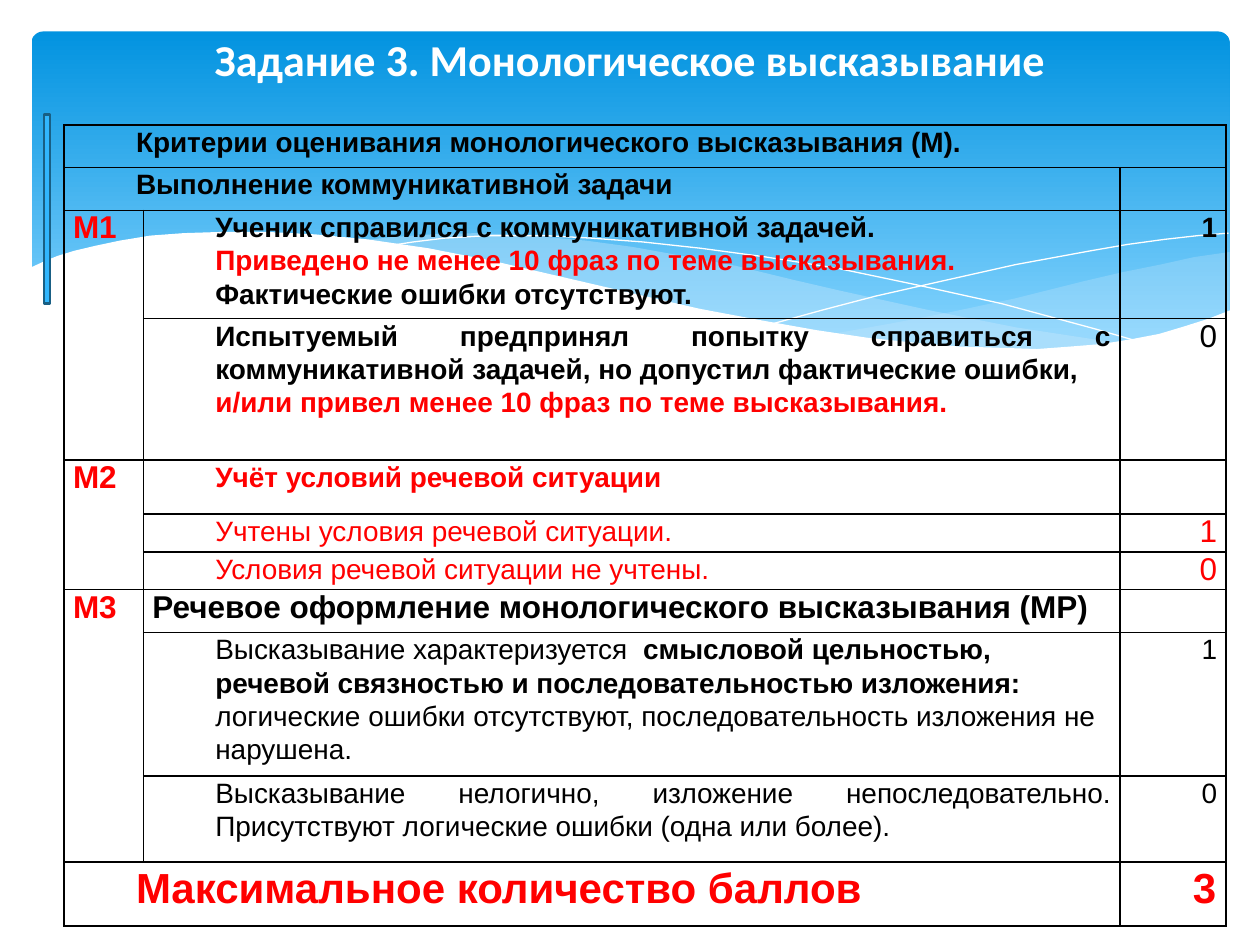
from dataclasses import dataclass

from lxml import etree
from pptx import Presentation
from pptx.dml.color import RGBColor
from pptx.enum.shapes import MSO_SHAPE
from pptx.enum.text import MSO_ANCHOR, PP_ALIGN
from pptx.oxml.ns import qn
from pptx.util import Inches, Pt

ROUND, RECT = MSO_SHAPE.ROUNDED_RECTANGLE, MSO_SHAPE.RECTANGLE
MIDDLE = MSO_ANCHOR.MIDDLE
LEFT, RIGHT, CENTER, JUST = PP_ALIGN.LEFT, PP_ALIGN.RIGHT, PP_ALIGN.CENTER, PP_ALIGN.JUSTIFY


@dataclass(frozen=True)
class Theme:
    black: str = "000000"
    white: str = "FFFFFF"
    red: str = "FF0000"
    sky: str = "0293E0"
    pale: str = "83D3FE"
    mist: str = "C6E7FC"
    blue: str = "31B6FD"
    navy: str = "195F84"
    head: str = "Calibri"
    body: str = "Arial"
    title: float = 25.2
    text: int = 16
    mark: int = 18
    total: int = 24


T = Theme()
COLS = [0.63, 7.75, 0.84]
ROWS = [0.34, 0.34, 0.86, 1.12, 0.43, 0.3, 0.3, 0.34, 1.14, 0.68, 0.51]
SPANS = [(0, 0, 0, 2), (1, 0, 1, 1), (2, 0, 3, 0), (4, 0, 6, 0), (7, 0, 9, 0), (10, 0, 10, 1)]

BOLD = {"size": T.text, "bold": True, "color": T.black}
PLAIN = {**BOLD, "bold": False}
ALERT = {**BOLD, "color": T.red}
SOFT = {**PLAIN, "color": T.red}
LABEL = {**ALERT, "size": T.mark}
TOTAL = {**ALERT, "size": T.total}

INSET = {"indent": 0.5, "spacing": 1.07}
BODY = {"align": JUST, **INSET}
LOOSE = {"align": LEFT, **INSET}
SCORE = {"align": RIGHT, **INSET}
SUM = {"align": CENTER, **INSET}
FLUSH = {"align": LEFT}
EDGE = {"align": RIGHT}

CELLS = [
    (0, 0, BODY, [[("Критерии оценивания монологического высказывания (М).", BOLD)]]),
    (1, 0, BODY, [[("Выполнение коммуникативной задачи", BOLD)]]),
    (2, 0, FLUSH, [[("М1", LABEL)]]),
    (2, 1, BODY, [
        [("Ученик справился с коммуникативной задачей.", BOLD)],
        [("Приведено не менее 10 фраз по теме высказывания.", ALERT)],
        [("Фактические ошибки отсутствуют.", BOLD)]]),
    (2, 2, SCORE, [[("1", BOLD)]]),
    (3, 1, BODY, [
        [("Испытуемый предпринял попытку справиться с коммуникативной задачей, "
          "но допустил фактические ошибки,", BOLD)],
        [("и/или привел менее 10 фраз по теме высказывания.", ALERT)]]),
    (3, 2, EDGE, [[("0", {**PLAIN, "size": T.mark})]]),
    (4, 0, FLUSH, [[("М2", LABEL)]]),
    (4, 1, BODY, [[("Учёт условий речевой ситуации", ALERT)]]),
    (5, 1, BODY, [[("Учтены условия речевой ситуации.", SOFT)]]),
    (5, 2, EDGE, [[("1", {**SOFT, "size": T.mark})]]),
    (6, 1, BODY, [[("Условия речевой ситуации не учтены.", SOFT)]]),
    (6, 2, EDGE, [[("0", {**SOFT, "size": T.mark})]]),
    (7, 0, FLUSH, [[("М3", LABEL)]]),
    (7, 1, FLUSH, [[("Речевое оформление монологического высказывания (МР)",
                     {**BOLD, "size": T.mark})]]),
    (8, 1, LOOSE, [[
        ("Высказывание характеризуется  ", PLAIN),
        ("смысловой цельностью, речевой связностью и последовательностью изложения:", BOLD),
        (" логические ошибки отсутствуют, последовательность изложения не нарушена.", PLAIN)]]),
    (8, 2, SCORE, [[("1", PLAIN)]]),
    (9, 1, BODY, [[("Высказывание нелогично, изложение непоследовательно. "
                    "Присутствуют логические ошибки (одна или более).", PLAIN)]]),
    (9, 2, SCORE, [[("0", PLAIN)]]),
    (10, 0, BODY, [[("Максимальное количество баллов", TOTAL)]]),
    (10, 2, SUM, [[("3", TOTAL)]]),
]

LENS = [(9.76, 2), (9.48, 2.04), (9.21, 2.1), (8.91, 2.16), (8.61, 2.23), (8.05, 2.37),
        (7.53, 2.48), (7.06, 2.57), (6.61, 2.65), (7.05, 2.71), (7.45, 2.75), (7.81, 2.77),
        (8.14, 2.78), (8.44, 2.77), (8.72, 2.74), (8.97, 2.7), (9.21, 2.65), (9.49, 2.57),
        (9.76, 2.47)]
BAND = [(8.93, 2.73), (8.66, 2.69), (8.07, 2.6), (7.41, 2.47), (6.68, 2.31), (6.29, 2.22),
        (5.84, 2.11), (5.41, 2.03), (5.02, 1.96), (4.65, 1.91), (4.2, 1.87), (3.8, 1.85),
        (3.44, 1.86), (3.13, 1.88), (2.86, 1.91), (3.23, 1.96), (3.62, 2.03), (4.04, 2.11),
        (4.49, 2.22), (4.91, 2.32), (5.3, 2.4), (5.66, 2.48), (6.01, 2.55), (6.34, 2.61),
        (6.65, 2.66), (6.95, 2.7), (7.36, 2.75), (7.73, 2.77), (8.07, 2.78), (8.38, 2.78),
        (8.67, 2.76)]
FALL = [(3.09, 1.95), (3.28, 1.92), (3.53, 1.89), (3.87, 1.87), (4.33, 1.87), (4.69, 1.89),
        (5.1, 1.92), (5.56, 1.97), (6.08, 2.04), (6.65, 2.13), (7.27, 2.26), (7.95, 2.41),
        (8.69, 2.61), (9.07, 2.72)]
RISE = [(6.13, 2.57), (6.53, 2.46), (6.95, 2.35), (7.48, 2.23), (8.06, 2.1), (8.66, 1.99),
        (8.95, 1.94), (9.24, 1.9), (9.51, 1.87), (9.75, 1.85)]
FRONT = [(9.77, 2.46), (9.59, 2.53), (9.4, 2.59), (9.2, 2.65), (8.99, 2.69), (8.75, 2.73),
         (8.5, 2.75), (8.23, 2.77), (7.93, 2.76), (7.61, 2.75), (7.26, 2.72), (6.88, 2.68),
         (6.48, 2.62), (6.03, 2.54), (5.55, 2.45), (5.03, 2.33), (4.47, 2.2), (3.91, 2.07),
         (3.4, 1.97), (2.92, 1.9), (2.5, 1.86), (2.11, 1.84), (1.77, 1.84), (1.46, 1.85),
         (1.19, 1.87), (0.95, 1.91), (0.76, 1.95), (0.59, 1.99), (0.46, 2.03), (0.36, 2.07),
         (0.23, 2.13), (0.23, 3.29), (9.77, 3.29)]


def rgb(hue):
    return RGBColor.from_string(hue)


def assign(item, **vals):
    for name, val in vals.items():
        setattr(item, name, val)


def ink(run, size, bold, color, name=T.body):
    assign(run.font, size=Pt(size), bold=bold, name=name)
    run.font.color.rgb = rgb(color)


def write(frame, look, lines):
    for num, runs in enumerate(lines):
        para = frame.add_paragraph() if num else frame.paragraphs[0]
        assign(para, alignment=look["align"], line_spacing=look.get("spacing", 1.0))
        props = para._p.get_or_add_pPr()
        props.set("marL", str(Inches(look.get("indent", 0))))
        props.set("indent", "0")
        for text, form in runs:
            run = para.add_run()
            run.text = text
            ink(run, **form)


def block(slide, kind, *box):
    shape = slide.shapes.add_shape(kind, *map(Inches, box))
    shape.shadow.inherit = False
    return shape


def curve(slide, pts, fill=None, alpha=100):
    first, *rest = [(Inches(x), Inches(y)) for x, y in pts]
    pen = slide.shapes.build_freeform(*first, scale=1.0)
    pen.add_line_segments(rest, close=fill is not None)
    shape = pen.convert_to_shape()
    shape.shadow.inherit = False
    if fill is None:
        shape.fill.background()
        shape.line.color.rgb = rgb(T.white)
        shape.line.width = Pt(0)
        return
    shape.line.fill.background()
    shape.fill.solid()
    shape.fill.fore_color.rgb = rgb(fill)
    if alpha < 100:
        tone = shape._element.spPr.find(qn("a:solidFill"))[0]
        etree.SubElement(tone, qn("a:alpha"), val=str(alpha * 1000))


def sky(slide):
    panel = block(slide, ROUND, 0.25, 0.25, 9.51, 2.7)
    panel.adjustments[0] = 0.034
    panel.line.fill.background()
    panel.fill.gradient()
    panel.fill.gradient_angle = 270
    for stop, hue, spot in zip(panel.fill.gradient_stops, (T.sky, T.pale), (0, 0.9)):
        stop.color.rgb = rgb(hue)
        stop.position = spot
    curve(slide, LENS, T.mist, 29)
    curve(slide, BAND, T.mist, 40)
    curve(slide, FALL)
    curve(slide, RISE)
    curve(slide, FRONT, T.white)


def title(slide, text):
    frame = slide.shapes.add_textbox(*map(Inches, (0.5, 0.2, 9, 0.54))).text_frame
    assign(frame, word_wrap=True, vertical_anchor=MIDDLE, margin_top=0, margin_bottom=0)
    form = {"size": T.title, "bold": True, "color": T.white, "name": T.head}
    write(frame, {"align": CENTER}, [[(text, form)]])


def border(cell):
    props = cell._tc.get_or_add_tcPr()
    for side in ("lnL", "lnR", "lnT", "lnB"):
        line = etree.SubElement(props, qn("a:" + side), w=str(Pt(1)))
        fill = etree.SubElement(line, qn("a:solidFill"))
        etree.SubElement(fill, qn("a:srgbClr"), val=T.black)


def grid(slide):
    box = map(Inches, (0.51, 0.99, sum(COLS), sum(ROWS)))
    table = slide.shapes.add_table(len(ROWS), len(COLS), *box).table
    assign(table, first_row=False, horz_banding=False)
    for col, width in zip(table.columns, COLS):
        col.width = Inches(width)
    for row, height in zip(table.rows, ROWS):
        row.height = Inches(height)
    for cell in table.iter_cells():
        assign(cell, margin_left=Inches(0.07), margin_right=Inches(0.07),
               margin_top=0, margin_bottom=0)
        border(cell)
        cell.fill.background()
    for top, left, low, right in SPANS:
        table.cell(top, left).merge(table.cell(low, right))
    for row, col, look, lines in CELLS:
        write(table.cell(row, col).text_frame, look, lines)


def strip(slide):
    bar = block(slide, RECT, 0.35, 0.91, 0.05, 1.5)
    bar.fill.solid()
    bar.fill.fore_color.rgb = rgb(T.blue)
    bar.line.color.rgb = rgb(T.navy)
    bar.line.width = Pt(1.25)


def main():
    deck = Presentation()
    assign(deck, slide_width=Inches(10), slide_height=Inches(7.5))
    slide = deck.slides.add_slide(deck.slide_layouts[6])
    sky(slide)
    title(slide, "Задание 3. Монологическое высказывание")
    grid(slide)
    strip(slide)
    deck.save("out.pptx")


if __name__ == "__main__":
    main()
